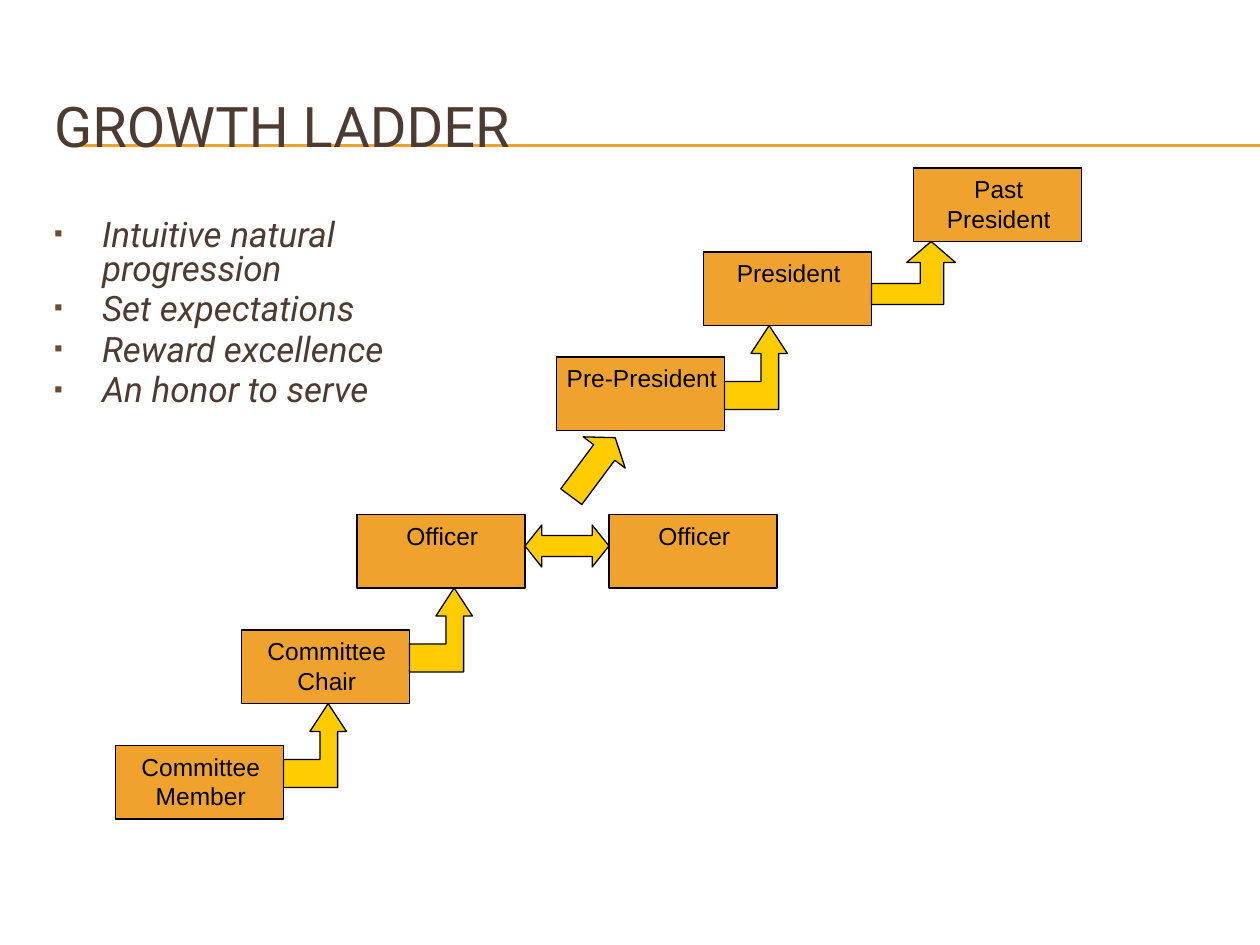
from lxml.etree import SubElement
from pptx import Presentation
from pptx.dml.color import RGBColor
from pptx.enum.shapes import MSO_CONNECTOR, MSO_SHAPE
from pptx.enum.text import MSO_ANCHOR, MSO_AUTO_SIZE, PP_ALIGN
from pptx.oxml.ns import qn
from pptx.util import Inches, Pt

BROWN = RGBColor(0x4E, 0x3B, 0x30)
ORANGE = RGBColor(0xF0, 0xA2, 0x2E)
YELLOW = RGBColor(0xFF, 0xCC, 0x00)
BLACK = RGBColor(0, 0, 0)
BULLET_COLOR = "6B4C2C"

GRID = Inches(1) // 12  # the diagram sits on a grid of twelfths of an inch
BOX_WIDTH, BOX_HEIGHT = 16, 7


def write_text(paragraph, text, *, font, size, color, italic=False,
               alignment=PP_ALIGN.LEFT):
    paragraph.text = text
    paragraph.alignment = alignment
    paragraph.font.name = font
    paragraph.font.size = Pt(size)
    paragraph.font.color.rgb = color
    paragraph.font.italic = italic


def paint(shape, color):
    shape.shadow.inherit = False
    shape.fill.solid()
    shape.fill.fore_color.rgb = color
    shape.line.color.rgb = BLACK
    shape.line.width = Pt(0.75)


presentation = Presentation()
presentation.slide_width, presentation.slide_height = Inches(10), Inches(7.5)
slide = presentation.slides.add_slide(presentation.slide_layouts[1])
shapes = slide.shapes

# Double rule behind the title
for index, y in enumerate((1.15, 1.16)):
    rule = shapes.add_connector(MSO_CONNECTOR.STRAIGHT, Inches(0.56), Inches(y),
                                presentation.slide_width, Inches(y))
    rule.line.color.rgb = ORANGE
    rule.line.width = Pt(0.75)
    SubElement(rule._element.spPr, qn("a:effectLst"))
    shapes._spTree.insert(2 + index, rule._element)

# Title
title = shapes.title
title.left, title.top = Inches(0.33), Inches(0.53)
title.width, title.height = Inches(9.5), Inches(0.92)
title.text_frame.auto_size = MSO_AUTO_SIZE.NONE
title.text_frame.vertical_anchor = MSO_ANCHOR.MIDDLE
write_text(title.text_frame.paragraphs[0], "GROWTH LADDER",
           font="Roboto", size=32, color=BROWN)

# Bulleted list
body = slide.placeholders[1]
body.left, body.top = Inches(0.33), Inches(1.7)
body.width, body.height = Inches(2.83), Inches(1.8)
body.text_frame.auto_size = MSO_AUTO_SIZE.NONE
benefits = ["Intuitive natural progression", "Set expectations",
            "Reward excellence", "An honor to serve"]
for index, benefit in enumerate(benefits):
    paragraph = (body.text_frame.add_paragraph() if index
                 else body.text_frame.paragraphs[0])
    paragraph.line_spacing = 0.8
    paragraph.space_before = Pt(4 if index else 0)
    properties = paragraph._p.get_or_add_pPr()
    properties.set("marL", str(Inches(0.38)))
    properties.set("indent", str(-Inches(0.38)))
    bullet_color = SubElement(properties, qn("a:buClr"))
    SubElement(bullet_color, qn("a:srgbClr"), val=BULLET_COLOR)
    SubElement(properties, qn("a:buSzPct"), val="70000")
    SubElement(properties, qn("a:buFont"), typeface="Arial")
    SubElement(properties, qn("a:buChar"), char="▪")
    write_text(paragraph, benefit, font="Roboto", size=20, color=BROWN, italic=True)

# Steps of the ladder: column, row, lines of the label
steps = [
    (11, 71, ["Committee Member"]),
    (23, 60, ["Committee Chair"]),
    (58, 49, ["Officer"]),
    (34, 49, ["Officer"]),
    (53, 34, ["Pre-President"]),
    (67, 24, ["President"]),
    (87, 16, ["Past", "President"]),
]
for column, row, lines in steps:
    group = shapes.add_group_shape()
    box = group.shapes.add_shape(MSO_SHAPE.RECTANGLE, column * GRID, row * GRID,
                                 BOX_WIDTH * GRID, BOX_HEIGHT * GRID)
    paint(box, ORANGE)
    # The label is a little wider than its box, so long names stay on one line
    label = group.shapes.add_textbox((column - 1) * GRID, row * GRID,
                                     Inches(1.52), BOX_HEIGHT * GRID)
    label.text_frame.word_wrap = True
    for index, line in enumerate(lines):
        paragraph = (label.text_frame.add_paragraph() if index
                     else label.text_frame.paragraphs[0])
        write_text(paragraph, line, font="Arial", size=14, color=BLACK,
                   alignment=PP_ALIGN.CENTER)

# Bent arrows: one outline in shares of each arrow's width and height
BENT_OUTLINE = [(0.71, 0), (0.42, 1 / 3), (0.58, 1 / 3), (0.58, 2 / 3), (0, 2 / 3),
                (0, 1), (0.86, 1), (0.86, 1 / 3), (1, 1 / 3)]
bent_arrows = [(27, 67, 6, 8), (39, 56, 6, 8), (69, 31, 6, 8), (83, 23, 8, 6)]
for column, row, width, height in bent_arrows:
    points = [(round((column + x * width) * GRID), round((row + y * height) * GRID))
              for x, y in BENT_OUTLINE]
    builder = shapes.build_freeform(*points[0])
    builder.add_line_segments(points[1:], close=True)
    paint(builder.convert_to_shape(), YELLOW)

# Straight arrows: preset, column, row, width, height, head length, rotation
straight_arrows = [
    (MSO_SHAPE.LEFT_RIGHT_ARROW, 50, 50, 8, 4, 0.4, 0),
    (MSO_SHAPE.RIGHT_ARROW, 53, 42, 7, 5, 0.35, 306.6),
]
for preset, column, row, width, height, head, rotation in straight_arrows:
    arrow = shapes.add_shape(preset, column * GRID, row * GRID,
                             width * GRID, height * GRID)
    arrow.adjustments[0] = 0.5
    arrow.adjustments[1] = head
    arrow.rotation = rotation
    paint(arrow, YELLOW)

presentation.save("out.pptx")
